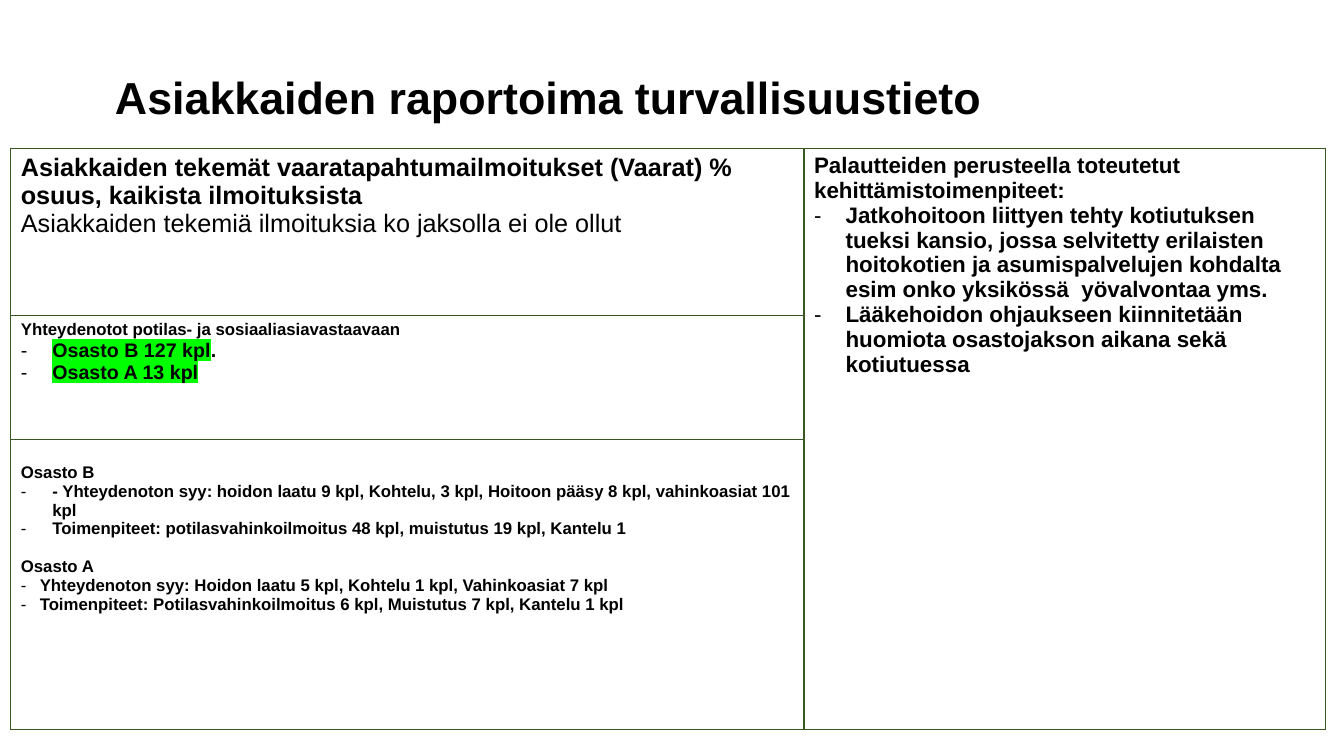
from dataclasses import dataclass

from lxml import etree
from pptx import Presentation
from pptx.dml.color import RGBColor
from pptx.enum.text import MSO_ANCHOR, MSO_AUTO_SIZE, PP_ALIGN
from pptx.oxml.ns import qn
from pptx.util import Pt

LEFT = PP_ALIGN.LEFT
MIDDLE = MSO_ANCHOR.MIDDLE
TOP = MSO_ANCHOR.TOP
NO_AUTOFIT = MSO_AUTO_SIZE.NONE
TITLE_ONLY = 5


@dataclass(frozen=True)
class Theme:
    font: str = "Arial"
    ink: str = "000000"
    paper: str = "FFFFFF"
    rule: str = "385723"
    marker: str = "00FF00"
    title: float = 32
    lead: float = 18
    measures: float = 16
    contacts: float = 14
    detail: float = 12


THEME = Theme()


@dataclass(frozen=True)
class Line:
    text: str
    size: float
    bold: bool = True
    indent: float = 0
    before: float = 0
    marked: bool = False
    tail: str = ""


@dataclass(frozen=True)
class Section:
    row: int
    column: int
    lines: tuple[Line, ...]
    top_margin: float = 3.6


WIDE, NARROW = 22.5, 13.5
COLUMNS = (566.64, 372.24)
ROWS = (119.5, 88.6, 207.2)

SECTIONS = (
    Section(0, 0, (
        Line("Asiakkaiden tekemät vaaratapahtumailmoitukset (Vaarat) % osuus, kaikista ilmoituksista", THEME.lead),
        Line("Asiakkaiden tekemiä ilmoituksia ko jaksolla ei ole ollut", THEME.lead, bold=False),
    )),
    Section(0, 1, (
        Line("Palautteiden perusteella toteutetut kehittämistoimenpiteet:", THEME.measures),
        Line("Jatkohoitoon liittyen tehty kotiutuksen tueksi kansio, jossa selvitetty erilaisten  hoitokotien "
             "ja asumispalvelujen kohdalta esim onko yksikössä  yövalvontaa yms.", THEME.measures, indent=WIDE),
        Line("Lääkehoidon ohjaukseen kiinnitetään huomiota osastojakson aikana sekä kotiutuessa",
             THEME.measures, indent=WIDE),
    )),
    Section(1, 0, (
        Line("Yhteydenotot potilas- ja sosiaaliasiavastaavaan", THEME.detail),
        Line("Osasto B 127 kpl", THEME.contacts, indent=WIDE, marked=True, tail="."),
        Line("Osasto A 13 kpl", THEME.contacts, indent=WIDE, marked=True),
    )),
    Section(2, 0, (
        Line("Osasto B", THEME.detail),
        Line("- Yhteydenoton syy: hoidon laatu 9 kpl, Kohtelu, 3 kpl, Hoitoon pääsy 8 kpl, vahinkoasiat 101 kpl",
             THEME.detail, indent=WIDE),
        Line("Toimenpiteet: potilasvahinkoilmoitus 48 kpl, muistutus 19 kpl, Kantelu 1", THEME.detail, indent=WIDE),
        Line("Osasto A", THEME.detail, before=13.5),
        Line("Yhteydenoton syy: Hoidon laatu 5 kpl, Kohtelu 1 kpl, Vahinkoasiat 7 kpl", THEME.detail, indent=NARROW),
        Line("Toimenpiteet: Potilasvahinkoilmoitus 6 kpl, Muistutus 7 kpl, Kantelu 1 kpl",
             THEME.detail, indent=NARROW),
    ), top_margin=17),
)


def add_text(paragraph, text: str, *, size: float, bold: bool = True, marked: bool = False) -> None:
    run = paragraph.add_run()
    run.text = text
    run.font.size = Pt(size)
    run.font.bold = bold
    run.font.color.rgb = RGBColor.from_string(THEME.ink)
    run.font.name = THEME.font
    if marked:
        highlight = etree.Element(qn("a:highlight"))
        etree.SubElement(highlight, qn("a:srgbClr"), val=THEME.marker)
        run._r.rPr.find(qn("a:solidFill")).addnext(highlight)


def add_dash(paragraph, indent: float) -> None:
    properties = paragraph._p.get_or_add_pPr()
    properties.set("marL", str(Pt(indent)))
    properties.set("indent", str(-Pt(indent)))
    etree.SubElement(properties, qn("a:buFont"), typeface=THEME.font)
    etree.SubElement(properties, qn("a:buChar"), char="-")


def write_line(paragraph, line: Line) -> None:
    paragraph.alignment = LEFT
    if line.before:
        paragraph.space_before = Pt(line.before)
    if line.indent:
        add_dash(paragraph, line.indent)
    add_text(paragraph, line.text, size=line.size, bold=line.bold, marked=line.marked)
    if line.tail:
        add_text(paragraph, line.tail, size=line.size, bold=line.bold)


def frame_cell(cell) -> None:
    cell.fill.solid()
    cell.fill.fore_color.rgb = RGBColor.from_string(THEME.paper)
    properties = cell._tc.get_or_add_tcPr()
    for position, side in enumerate(("lnL", "lnR", "lnT", "lnB")):
        border = etree.Element(qn(f"a:{side}"), w=str(Pt(1)))
        fill = etree.SubElement(border, qn("a:solidFill"))
        etree.SubElement(fill, qn("a:srgbClr"), val=THEME.rule)
        properties.insert(position, border)


def write_section(table, section: Section) -> None:
    cell = table.cell(section.row, section.column)
    cell.vertical_anchor = TOP
    cell.margin_top = Pt(section.top_margin)
    frame = cell.text_frame
    for index, line in enumerate(section.lines):
        write_line(frame.add_paragraph() if index else frame.paragraphs[0], line)


def write_title(title) -> None:
    title.left, title.top, title.width, title.height = Pt(74.88), Pt(19.44), Pt(727.92), Pt(104.4)
    frame = title.text_frame
    frame.auto_size = NO_AUTOFIT
    frame.word_wrap = True
    frame.vertical_anchor = MIDDLE
    heading = frame.paragraphs[0]
    heading.alignment = LEFT
    heading.line_spacing = 0.9
    add_text(heading, "Asiakkaiden raportoima turvallisuustieto", size=THEME.title)


def add_report(slide) -> None:
    table = slide.shapes.add_table(
        len(ROWS), len(COLUMNS), Pt(7.7), Pt(105.84), Pt(sum(COLUMNS)), Pt(sum(ROWS))
    ).table
    table.first_row = False
    table.horz_banding = False
    for column, width in zip(table.columns, COLUMNS):
        column.width = Pt(width)
    for row, height in zip(table.rows, ROWS):
        row.height = Pt(height)
    for cell in table.iter_cells():
        frame_cell(cell)
    table.cell(0, 1).merge(table.cell(len(ROWS) - 1, 1))
    for section in SECTIONS:
        write_section(table, section)


def main() -> None:
    presentation = Presentation()
    presentation.slide_width, presentation.slide_height = Pt(960), Pt(540)
    slide = presentation.slides.add_slide(presentation.slide_layouts[TITLE_ONLY])
    write_title(slide.shapes.title)
    add_report(slide)
    presentation.save("out.pptx")


if __name__ == "__main__":
    main()
